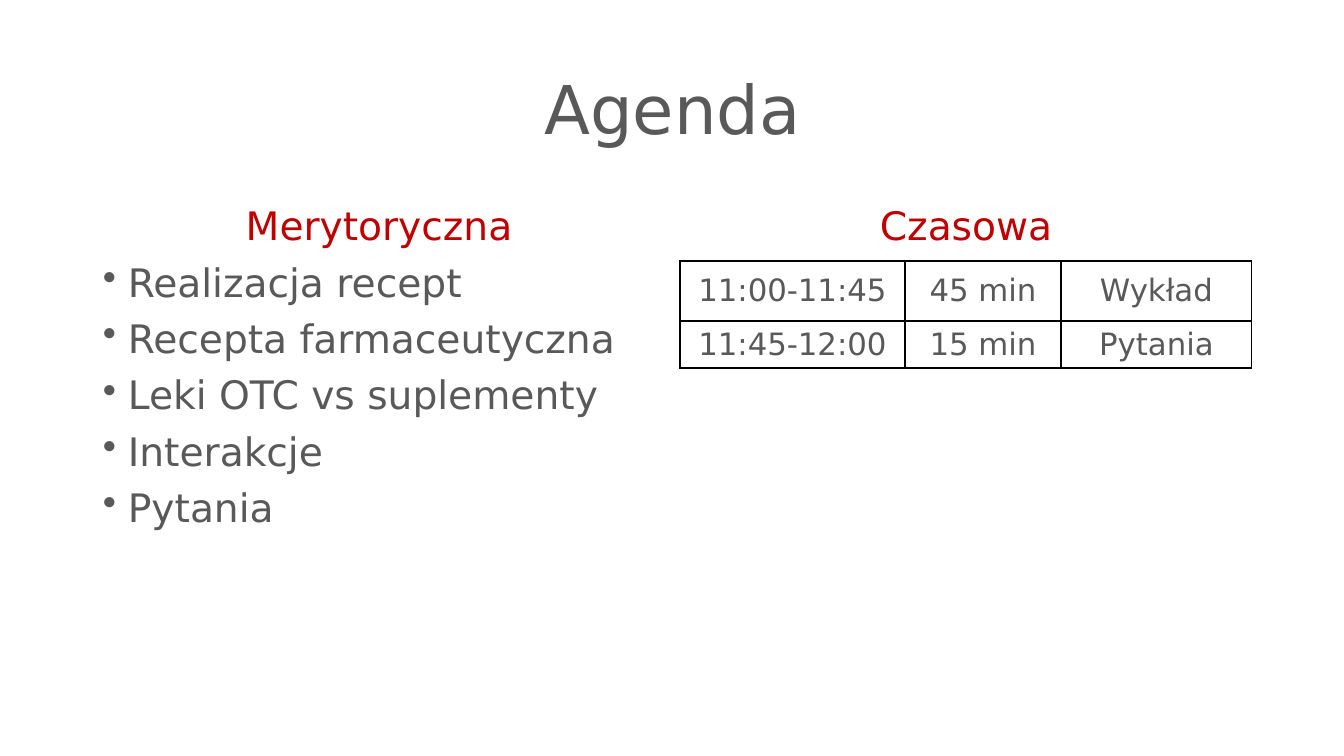
from dataclasses import dataclass

from lxml.etree import SubElement as Sub
from pptx import Presentation
from pptx.dml.color import RGBColor as RGB
from pptx.enum.text import MSO_ANCHOR as Anchor, PP_ALIGN as Align
from pptx.oxml.ns import qn
from pptx.util import Emu, Pt


@dataclass(frozen=True)
class Theme:
    font: str = "DejaVu Sans"
    text: str = "595959"
    accent: str = "C00000"
    back: str = "FFFFFF"
    border: str = "000000"
    title: int = 48
    body: int = 28
    cell: int = 22


def px(n):
    return Emu(round(n * 914400 / 100.8))


class Deck:
    def __init__(self, theme):
        self.theme = theme
        self.prs = Presentation()
        self.prs.slide_width, self.prs.slide_height = px(1344), px(756)
        self.slide = self.prs.slides.add_slide(self.prs.slide_layouts[5])
        fill = self.slide.background.fill
        fill.solid()
        fill.fore_color.rgb = RGB.from_string(theme.back)

    def run(self, para, text, size, color):
        run = para.add_run()
        run.text = text
        run.font.name = self.theme.font
        run.font.size = Pt(size)
        run.font.color.rgb = RGB.from_string(color)

    def title(self, text, x, y, w, h):
        shape = self.slide.shapes.title
        shape.left, shape.top, shape.width, shape.height = map(px, (x, y, w, h))
        frame = shape.text_frame
        frame.vertical_anchor = Anchor.MIDDLE
        para = frame.paragraphs[0]
        para.alignment = Align.CENTER
        para.line_spacing = 0.9
        self.run(para, text, self.theme.title, self.theme.text)

    def column(self, head, items, x, y, w, h):
        box = self.slide.shapes.add_textbox(*map(px, (x, y, w, h)))
        frame = box.text_frame
        frame.word_wrap = True
        for i, text in enumerate([head, *items]):
            para = frame.add_paragraph() if i else frame.paragraphs[0]
            para.line_spacing = 0.9
            para.space_before = Pt(10)
            if i:
                self.bullet(para)
            else:
                para.alignment = Align.CENTER
            color = self.theme.text if i else self.theme.accent
            self.run(para, text, self.theme.body, color)

    def bullet(self, para):
        props = para._p.get_or_add_pPr()
        props.set("marL", str(px(25)))
        props.set("indent", str(-px(25)))
        Sub(props, qn("a:buChar"), char="•")

    def table(self, rows, x, y, widths, heights):
        size = px(sum(widths)), px(sum(heights))
        grid = self.slide.shapes.add_table(
            len(rows), len(widths), px(x), px(y), *size).table
        grid.first_row = grid.horz_banding = False
        for col, w in zip(grid.columns, widths):
            col.width = px(w)
        for row, h, texts in zip(grid.rows, heights, rows):
            row.height = px(h)
            for cell, text in zip(row.cells, texts):
                self.edges(cell)
                cell.fill.background()
                cell.vertical_anchor = Anchor.MIDDLE
                para = cell.text_frame.paragraphs[0]
                para.alignment = Align.CENTER
                self.run(para, text, self.theme.cell, self.theme.text)

    def edges(self, cell):
        props = cell._tc.get_or_add_tcPr()
        for side in "LRTB":
            line = Sub(props, qn(f"a:ln{side}"), w=str(Pt(1)))
            fill = Sub(line, qn("a:solidFill"))
            Sub(fill, qn("a:srgbClr"), val=self.theme.border)


def main():
    deck = Deck(Theme())
    left, right, top, wide, tall = 93, 680, 202, 572, 480

    # Heading
    deck.title("Agenda", left, 40, 1159, 146)

    # Topics
    topics = ["Realizacja recept", "Recepta farmaceutyczna",
              "Leki OTC vs suplementy", "Interakcje", "Pytania"]
    deck.column("Merytoryczna", topics, left, top, wide, tall)

    # Schedule
    deck.column("Czasowa", [], right, top, wide, tall)
    times = [("11:00-11:45", "45 min", "Wykład"),
             ("11:45-12:00", "15 min", "Pytania")]
    deck.table(times, right, 261, (225, 156, 191), (60, 46))

    deck.prs.save("out.pptx")


if __name__ == "__main__":
    main()
